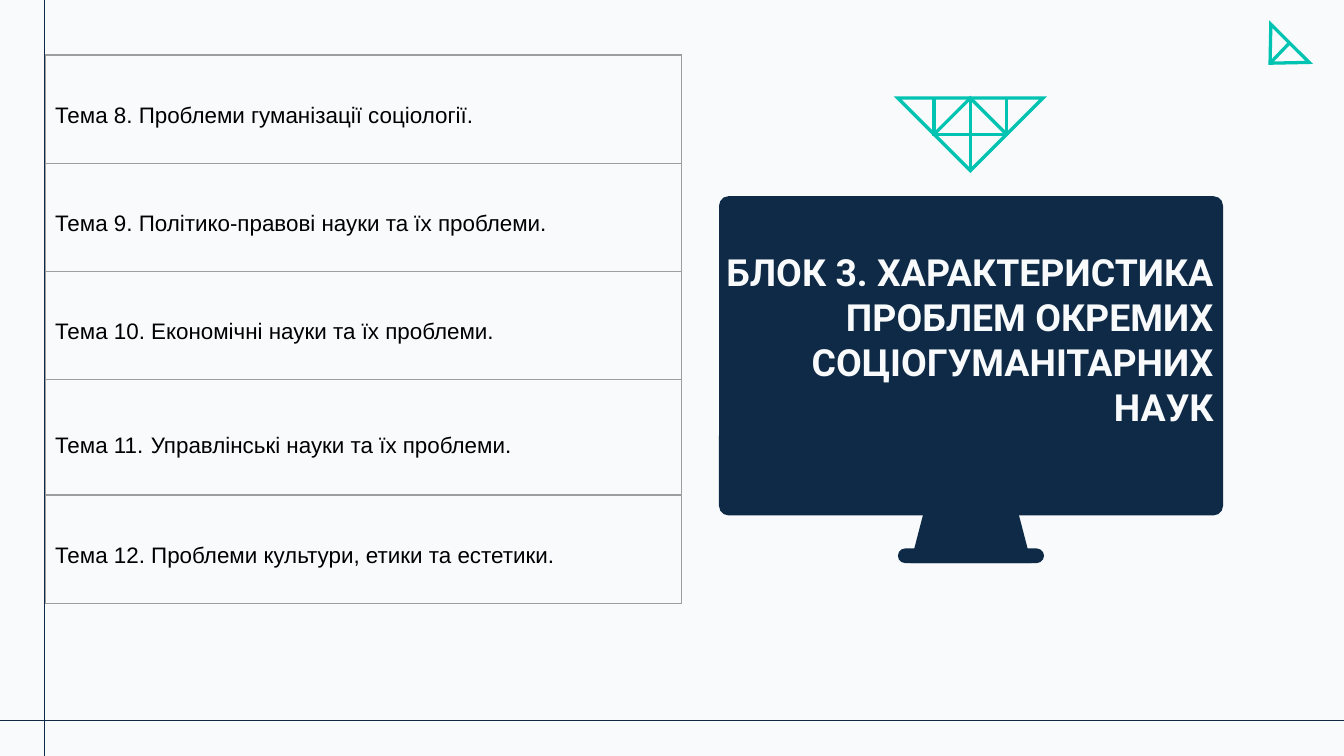
from collections import namedtuple

from lxml.etree import SubElement
from pptx import Presentation
from pptx.dml.color import RGBColor
from pptx.enum.shapes import MSO_CONNECTOR, MSO_SHAPE as Preset
from pptx.enum.text import MSO_ANCHOR as Anchor, MSO_AUTO_SIZE as AutoSize, PP_ALIGN as Align
from pptx.oxml.ns import qn
from pptx.util import Inches, Pt

WIDTH = 10
HEIGHT = WIDTH * 9 / 16
COLORS = {"paper": "F8FAFB", "navy": "0E2A47", "teal": "00C3B1", "border": "9E9E9E", "text": "000000"}
TITLE = "БЛОК 3. ХАРАКТЕРИСТИКА ПРОБЛЕМ ОКРЕМИХ СОЦІОГУМАНІТАРНИХ НАУК"
# Each topic is a list of (text, size) runs.
TOPICS = [
    [("Тема 8. Проблеми гуманізації соціології.", 12)],
    [("Тема 9. Політико-правові науки та їх проблеми.", 12)],
    [("Тема 10. Економічні науки та їх проблеми.", 12)],
    [("Тема 11.", 12), (" ", 14), ("Управлінські науки та їх проблеми.", 12)],
    [("Тема 12. Проблеми культури, етики та естетики.", 12)],
]
# Strokes are given as shares of the box around each ornament.
CORNER_STROKES = [[(0.02, 0), (1, 0.98), (0, 1), (0.02, 0)], [(0, 1), (0.5, 0.48)]]
PENDANT_STROKES = [
    [(0, 0), (1, 0), (0.5, 1), (0, 0)],
    [(0.25, 0), (0.25, 0.5), (0.75, 0.5), (0.75, 0)],
    [(0.25, 0.5), (0.5, 0), (0.75, 0.5)],
    [(0.5, 0), (0.5, 1)],
]

Box = namedtuple("Box", "left top width height")


def rgb(name):
    return RGBColor.from_string(COLORS[name])


def inches(lengths):
    return [Inches(length) for length in lengths]


def within(box, left, top, width, height):
    """Turn shares of a box into a box in inches."""
    return Box(box.left + left * box.width, box.top + top * box.height,
               width * box.width, height * box.height)


def add_run(paragraph, text, size, font="Arial", color="text", bold=False):
    run = paragraph.add_run()
    run.text = text
    run.font.name, run.font.size, run.font.bold = font, Pt(size), bold
    run.font.color.rgb = rgb(color)


def add_guides(slide, box, across, down):
    """Draw one full-width and one full-height line at shares of the box."""
    x, y = box.left + across * box.width, box.top + down * box.height
    right, bottom = box.left + box.width, box.top + box.height
    for ends in [(box.left, y, right, y), (x, bottom, x, box.top)]:
        line = slide.shapes.add_connector(MSO_CONNECTOR.STRAIGHT, *inches(ends))
        line.line.color.rgb = rgb("navy")
        line.line.width = Pt(0.75)
        SubElement(line.element.spPr, qn("a:effectLst"))


def add_ornament(slide, box, strokes):
    points = [[inches((box.left + x * box.width, box.top + y * box.height)) for x, y in stroke]
              for stroke in strokes]
    builder = slide.shapes.build_freeform(*points[0][0])
    for index, stroke in enumerate(points):
        if index:
            builder.move_to(*stroke[0])
        builder.add_line_segments(stroke[1:], close=False)
    shape = builder.convert_to_shape()
    shape.shadow.inherit = False
    shape.fill.background()
    shape.line.color.rgb = rgb("teal")
    shape.line.width = Pt(1.75)
    SubElement(shape.element.spPr.find(qn("a:ln")), qn("a:miter"), lim="800000")


def add_monitor(slide, box):
    """Draw stand, screen and foot, centred in the box; return the last part."""
    parts = [
        (Preset.TRAPEZOID, 0.24, 0.86, 0.14, 0.26),
        (Preset.ROUNDED_RECTANGLE, 1, 0, 0.87, 0.03),
        (Preset.ROUNDED_RECTANGLE, 0.29, 0.96, 0.04, 0.5),
    ]
    for preset, width, top, height, adjustment in parts:
        area = within(box, (1 - width) / 2, top, width, height)
        shape = slide.shapes.add_shape(preset, *inches(area))
        shape.adjustments[0] = adjustment
        shape.shadow.inherit = False
        shape.fill.solid()
        shape.fill.fore_color.rgb = rgb("navy")
        shape.line.fill.background()
    return shape


def place_title(slide, box, below):
    """Fill the title placeholder and lift it above the given shape."""
    title = slide.shapes.title
    title.left, title.top, title.width, title.height = inches(box)
    below.element.addnext(title.element)
    frame = title.text_frame
    frame.word_wrap, frame.auto_size = True, AutoSize.NONE
    frame.vertical_anchor = Anchor.BOTTOM
    frame.margin_left = frame.margin_right = frame.margin_top = frame.margin_bottom = Inches(0.1)
    paragraph = frame.paragraphs[0]
    paragraph.alignment = Align.RIGHT
    add_run(paragraph, TITLE, 20, font="Roboto", color="paper", bold=True)


def add_cell_borders(cell):
    properties = cell._tc.get_or_add_tcPr()
    for index, side in enumerate(("lnL", "lnR", "lnT", "lnB")):
        line = properties.makeelement(qn(f"a:{side}"), {"w": str(Pt(0.75))})
        fill = SubElement(line, qn("a:solidFill"))
        SubElement(fill, qn("a:srgbClr"), val=COLORS["border"])
        properties.insert(index, line)


def add_topics(slide, box, tall_row):
    """List the topics in equal rows, save for the taller one with mixed sizes."""
    table = slide.shapes.add_table(len(TOPICS), 1, *inches(box)).table
    table.first_row = table.horz_banding = False
    plain_row = (box.height - tall_row) / (len(TOPICS) - 1)
    for row, runs in zip(table.rows, TOPICS):
        row.height = Inches(tall_row if len(runs) > 1 else plain_row)
        cell = row.cells[0]
        cell.fill.background()
        cell.vertical_anchor = Anchor.MIDDLE
        cell.margin_left = cell.margin_right = cell.margin_top = cell.margin_bottom = Inches(0.07)
        add_cell_borders(cell)
        paragraph = cell.text_frame.paragraphs[0]
        paragraph.alignment = Align.JUSTIFY
        paragraph.line_spacing, paragraph.space_before = 1.5, Pt(12)
        for text, size in runs:
            add_run(paragraph, text, size)


def main():
    presentation = Presentation()
    presentation.slide_width, presentation.slide_height = Inches(WIDTH), Inches(HEIGHT)
    slide = presentation.slides.add_slide(presentation.slide_layouts[5])
    slide.background.fill.solid()
    slide.background.fill.fore_color.rgb = rgb("paper")

    add_guides(slide, Box(0, 0, WIDTH, HEIGHT), across=0.033, down=0.953)
    add_ornament(slide, Box(9.45, 0.18, 0.29, 0.29), CORNER_STROKES)
    monitor = add_monitor(slide, Box(5.35, 1.46, 3.75, 2.73))
    place_title(slide, Box(5.17, 2.1, 3.96, 1.19), below=monitor)
    add_ornament(slide, Box(6.68, 0.73, 1.08, 0.54), PENDANT_STROKES)
    add_topics(slide, Box(0.34, 0.41, 4.73, 4.08), tall_row=0.86)
    presentation.save("out.pptx")


if __name__ == "__main__":
    main()
